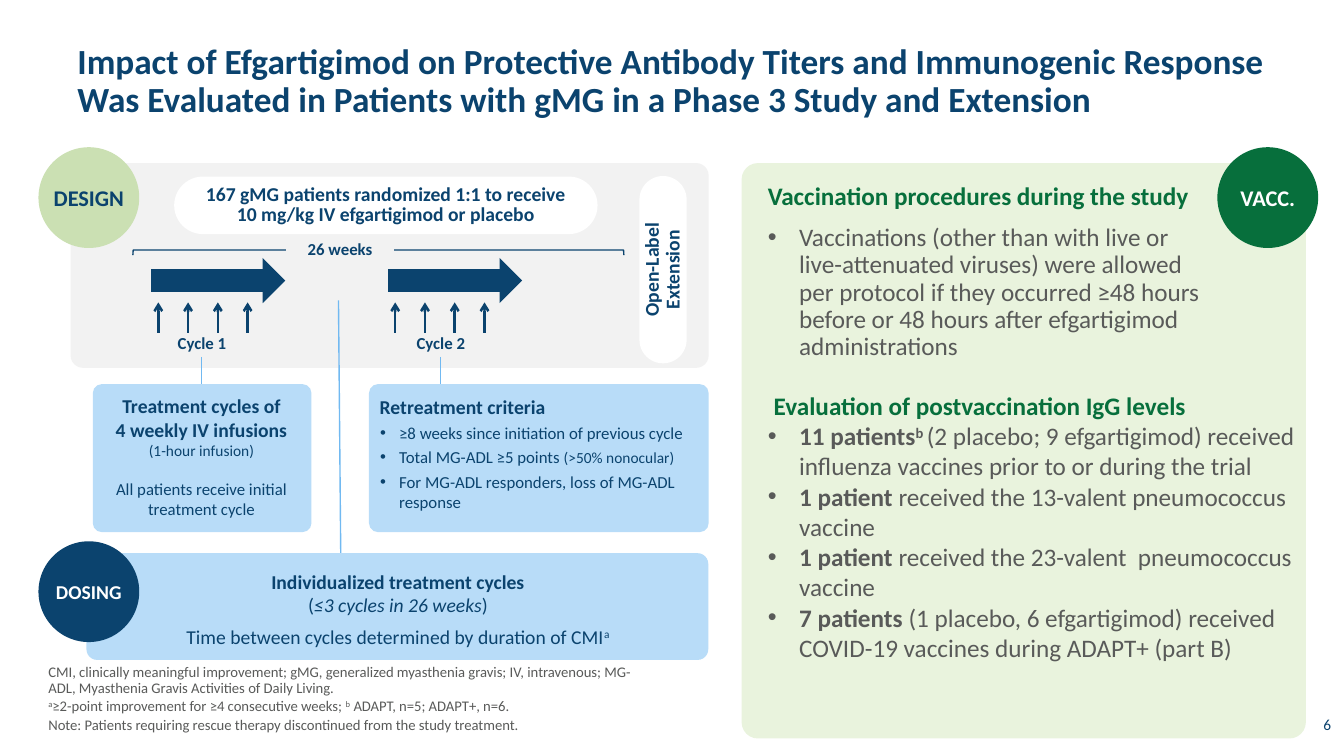
"""Build the slide on study design, dosing and vaccination in gMG patients."""
from copy import deepcopy

from lxml import etree
from pptx import Presentation
from pptx.dml.color import RGBColor
from pptx.enum.shapes import MSO_CONNECTOR, MSO_SHAPE
from pptx.enum.text import MSO_ANCHOR, PP_ALIGN
from pptx.oxml.ns import qn
from pptx.util import Cm, Pt

ROUND, OVAL, RECT = MSO_SHAPE.ROUNDED_RECTANGLE, MSO_SHAPE.OVAL, MSO_SHAPE.RECTANGLE
ARROW, BRACKET = MSO_SHAPE.RIGHT_ARROW, MSO_SHAPE.LEFT_BRACKET
STRAIGHT = MSO_CONNECTOR.STRAIGHT
LEFT, CENTER, RIGHT = PP_ALIGN.LEFT, PP_ALIGN.CENTER, PP_ALIGN.RIGHT
TOP, MIDDLE, BOTTOM = MSO_ANCHOR.TOP, MSO_ANCHOR.MIDDLE, MSO_ANCHOR.BOTTOM
COLORS = {
    "navy": "0B436E", "grey": "595A59", "white": "FFFFFF", "panel": "F2F2F2",
    "green": "076F3C", "lime": "CBE0B3", "mint": "E9F3DD", "sky": "B8DCF8",
    "line": "71B9F1",
}
RGB = {name: RGBColor.from_string(value) for name, value in COLORS.items()}
INSET = (0.25, 0.13, 0.25, 0.13)
NONE = (0, 0, 0, 0)


def write(sp, paras, font, align=LEFT, inset=INSET, anchor=TOP):
    """Fill a shape with (paragraph format, runs) pairs over a base font."""
    tf = sp.text_frame
    frame = dict(zip(("margin_left", "margin_top", "margin_right", "margin_bottom"), map(Cm, inset)))
    for key, value in {**frame, "word_wrap": True, "vertical_anchor": anchor}.items():
        setattr(tf, key, value)
    for n, (fmt, runs) in enumerate(paras):
        p = tf.add_paragraph() if n else tf.paragraphs[0]
        fmt = {"alignment": align, **fmt}
        left, first = fmt.pop("indent", (0, 0))
        for key, value in fmt.items():
            setattr(p, key, value)
        pPr = p._p.get_or_add_pPr()
        pPr.set("marL", str(Cm(left)))
        pPr.set("indent", str(Cm(first)))
        if first < 0:
            etree.SubElement(pPr, qn("a:buFont")).set("typeface", "Arial")
            etree.SubElement(pPr, qn("a:buChar")).set("char", "•")
        for text, change in runs:
            look = {"color": "navy", "bold": False, "sup": False, **font, **change}
            for i, line in enumerate(text.split("\n")):
                if i:
                    p.add_line_break()
                    p._p[-1].append(deepcopy(r._r.rPr))
                r = p.add_run()
                r.text = line
                r.font.name = "Calibri"
                r.font.size = Pt(look["size"])
                r.font.bold = look["bold"]
                r.font.italic = look.get("italic", False)
                r.font.color.rgb = RGB[look["color"]]
                if look["sup"]:
                    r._r.rPr.set("baseline", "30000")


def add(kind, box, fill=None, adj=None):
    """Add a preset shape, or a text box when kind is None; box is in cm."""
    box = [Cm(v) for v in box]
    if kind is None:
        return s.shapes.add_textbox(*box)
    sp = s.shapes.add_shape(kind, *box)
    sp.shadow.inherit = False
    sp.line.fill.background()
    if fill:
        sp.fill.solid()
        sp.fill.fore_color.rgb = RGB[fill]
    else:
        sp.fill.background()
    if adj is not None:
        sp.adjustments[0] = adj
    return sp


prs = Presentation()
prs.slide_width, prs.slide_height = Cm(33.87), Cm(19.05)
s = prs.slides.add_slide(prs.slide_layouts[5])

title = s.shapes.title
title.left, title.top, title.width, title.height = Cm(1.7), Cm(0.97), Cm(31.17), Cm(2.77)
write(title, [({"line_spacing": 0.9}, [(
    "Impact of Efgartigimod on Protective Antibody Titers and Immunogenic Response "
    "Was Evaluated in Patients with gMG in a Phase 3 Study and Extension", {})])],
    {"size": 25.2, "bold": True})

add(ROUND, (1.78, 4.11, 16.08, 5.16), "panel", 0.061)
write(add(None, (32.33, 18.01, 1.22, 1.04)), [({}, [("6", {})])], {"size": 11}, RIGHT, NONE)

note = {"line_spacing": 0.9, "space_before": Pt(2)}
write(add(None, (0.97, 17.07, 15.42, 1.55)), [
    (note, [("CMI, clinically meaningful improvement; gMG, generalized myasthenia gravis; "
             "IV, intravenous; MG-ADL, Myasthenia Gravis Activities of Daily Living.", {})]),
    (note, [("a", {"sup": True}), ("≥2-point improvement for ≥4 consecutive weeks; ", {}),
            ("b", {"sup": True}), (" ADAPT, n=5; ADAPT+, n=6.", {})]),
    (note, [("Note: Patients requiring rescue therapy discontinued from the study treatment.", {})]),
], {"size": 10.5, "color": "grey"}, inset=(0.25, 0, 0.25, 0.13), anchor=BOTTOM)

bracket = add(BRACKET, (9.47, 0.18, 0.13, 12.37))
bracket.rotation = 90
bracket.line.color.rgb = RGB["navy"]
bracket.line.width = Pt(1)
write(add(RECT, (7.21, 5.89, 2.72, 0.76), "panel"), [({}, [("26 weeks", {})])],
      {"size": 12, "bold": True}, CENTER)

for box, angle, text in (
    ((14.35, 6.2, 4.72, 1.19), 270, "Open-Label Extension"),
    ((4.39, 4.45, 10.67, 1.45), 0,
     "167 gMG patients randomized 1:1 to receive\n10 mg/kg IV efgartigimod or placebo"),
):
    pill = add(ROUND, box, "white", 0.5)
    pill.rotation = angle
    write(pill, [({"line_spacing": 0.88}, [(text, {})])],
          {"size": 14, "bold": True}, CENTER, anchor=MIDDLE)

lines = [(8.53, 7.57, 8.59, 14.3, "line", 1)]
for cycle, (x, label_x) in enumerate(((3.81, 4.11), (9.78, 10.13)), 1):
    add(ARROW, (x, 6.5, 3.38, 1.14), "navy")
    write(add(None, (label_x, 8.26, 1.96, 0.76)), [({}, [(f"Cycle {cycle}", {})])],
          {"size": 12, "bold": True}, CENTER)
    for dose in range(4):
        dose_x = x + 0.18 + 0.75 * dose
        lines.append((dose_x, 8.38, dose_x, 7.62, "navy", 1.75))
    lines.append((label_x + 0.97, 8.99, label_x + 0.97, 10.26, "line", 1))
for *ends, color, width in lines:
    cx = s.shapes.add_connector(STRAIGHT, *map(Cm, ends))
    cx.line.color.rgb = RGB[color]
    cx.line.width = Pt(width)
    if color == "navy":
        etree.SubElement(cx.line._get_or_add_ln(), qn("a:tailEnd")).set("type", "arrow")
    etree.SubElement(cx._element.spPr, qn("a:effectLst"))

for box, fill, adj in (
    ((18.69, 4.11, 14.22, 14.5), "mint", 0.029),
    ((2.34, 9.68, 5.51, 3.73), "sky", 0.061),
    ((9.3, 9.68, 8.56, 3.73), "sky", 0.061),
    ((2.18, 13.94, 15.67, 2.69), "sky", 0.1),
):
    add(ROUND, box, fill, adj)

for x, y, fill, text, size, color in (
    (0.97, 3.71, "lime", "DESIGN", 16, "navy"),
    (30.68, 3.71, "green", "VACC.", 16, "white"),
    (0.97, 13.64, "navy", "DOSING", 14, "white"),
):
    write(add(OVAL, (x, y, 2.54, 2.54), fill), [({}, [(text, {})])],
          {"size": size, "bold": True, "color": color}, CENTER, NONE, MIDDLE)

bold = {"bold": True}
heading = {"bold": True, "color": "green"}
spaced = {"line_spacing": 0.9, "space_before": Pt(10)}
bullet = {"indent": (0.79, -0.79)}
body = {"size": 18, "color": "grey"}
write(add(None, (19.1, 9.78, 14.43, 8.15)), [
    ({**spaced, "indent": (0.15, 0)}, [("Evaluation of postvaccination IgG levels", heading)]),
    (bullet, [("11 patients", bold), ("b ", {"bold": True, "sup": True}),
              ("(2 placebo; 9 efgartigimod) received influenza vaccines prior to or during the trial", {})]),
    (bullet, [("1 patient ", bold), ("received the 13-valent pneumococcus vaccine", {})]),
    (bullet, [("1 patient ", bold), ("received the 23-valent  pneumococcus vaccine", {})]),
    (bullet, [("7 patients ", bold),
              ("(1 placebo, 6 efgartigimod) received COVID-19 vaccines during ADAPT+ (part B)", {})]),
], body)
write(add(None, (19.1, 4.5, 11.81, 4.78)), [
    (spaced, [("Vaccination procedures during the study", heading)]),
    ({**spaced, **bullet}, [(
        "Vaccinations (other than with live or\nlive-attenuated viruses) were allowed per protocol if "
        "they occurred ≥48 hours before or 48 hours after efgartigimod administrations", {})]),
], body)

write(add(None, (2.36, 9.68, 5.44, 3.45)), [
    ({}, [("Treatment cycles of\n4 weekly IV infusions", {"size": 14, "bold": True})]),
    ({}, [("(1-hour infusion)", {"size": 11})]),
    ({"space_before": Pt(13.4)}, [("All patients receive initial treatment cycle", {})]),
], {"size": 12}, CENTER, (0.25, 0.25, 0.25, 0.13))

criterion = {"level": 1, "indent": (0.64, -0.48), "space_before": Pt(3)}
write(add(None, (9.42, 9.7, 8.33, 3.48)), [
    ({"indent": (0.15, 0)}, [("Retreatment criteria", {"size": 14, "bold": True})]),
    (criterion, [("≥8 weeks since initiation of previous cycle", {})]),
    (criterion, [("Total MG-ADL ≥5 points ", {}), ("(>50% nonocular)", {"size": 11})]),
    (criterion, [("For MG-ADL responders, loss of MG-ADL\nresponse", {})]),
], {"size": 12}, inset=(0, 0.25, 0, 0))

after = {"space_after": Pt(6)}
write(add(None, (3.68, 14.1, 12.7, 2.39)), [
    ({}, [("Individualized treatment cycles", bold)]),
    (after, [("(", {}), ("≤3 cycles in 26 weeks", {"italic": True}), (")", {})]),
    (after, [("Time between cycles determined by duration of CMI", {}), ("a", {"sup": True})]),
], {"size": 14}, CENTER, (0.25, 0.25, 0.25, 0.13))

prs.save("out.pptx")
